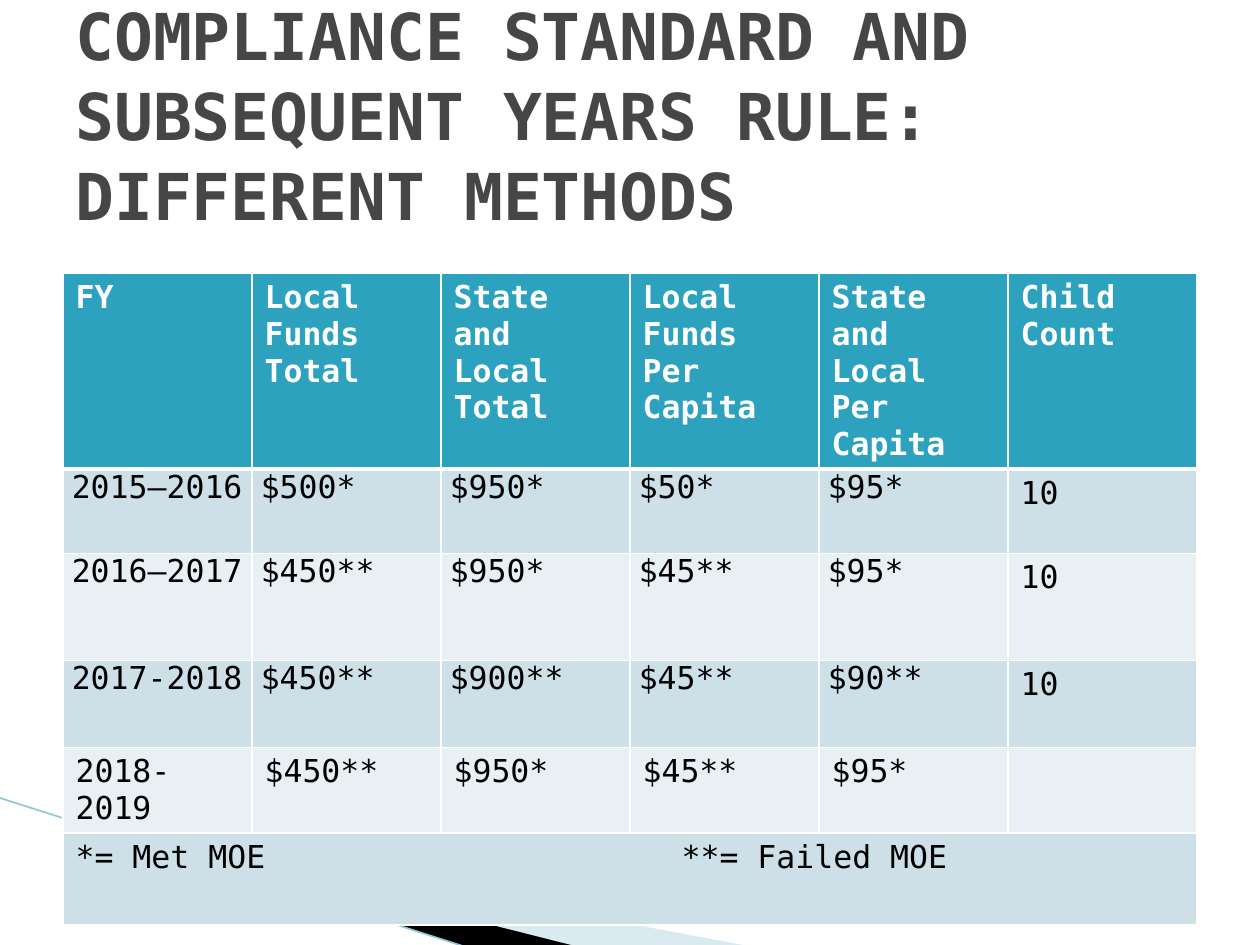
from lxml import etree
from pptx import Presentation, util as u
from pptx.dml.color import RGBColor
from pptx.enum import text
from pptx.oxml import ns

HUES = {"title": "464646", "head": "2DA2BF", "dark": "CDE0E8", "pale": "E8F0F4",
        "white": "FFFFFF", "black": "000000", "wedge": "A0CBDC", "line": "97C5D8"}
HEADS = ["FY", "Local Funds Total", "State and Local\nTotal",
         "Local Funds\nPer Capita", "State and Local Per Capita", "Child Count"]
YEARS = [["2015–2016 ", "$500*", "$950*", "$50*", "$95*", "10"],
         ["2016–2017", "$450**", "$950*", "$45**", "$95*", "10"],
         ["2017-2018", "$450**", "$900**", "$45**", "$90**", "10"],
         ["2018-2019", "$450**", "$950*", "$45**", "$95*", ""]]
KEY = ["*= Met MOE\t**= Failed MOE"] + [""] * 5
TALL = [0.94, 0.67, 0.85, 0.69, 0.66, 0.73]


def hue(name):
    return RGBColor.from_string(HUES[name])


def sub(node, tag, **attrs):
    return etree.SubElement(node, ns.qn(tag), **attrs)


class Page:
    """Holds the font and the slide being drawn."""

    def __init__(self, slide, face):
        self.slide, self.face = slide, face

    def style(self, frame, size, color, bold):
        for par in frame.paragraphs:
            font = par.font
            font.name, font.size, font.bold = self.face, u.Pt(size), bold
            font.color.rgb = hue(color)

    def shape(self, points, color, alpha=None):
        spots = [(u.Inches(x), u.Inches(y)) for x, y in points]
        pen = self.slide.shapes.build_freeform(*spots[0])
        pen.add_line_segments(spots[1:], close=True)
        form = pen.convert_to_shape()
        form.shadow.inherit = False
        form.fill.solid()
        form.fill.fore_color.rgb = hue(color)
        form.line.fill.background()
        if alpha:
            tint = form.fill._xPr.find(".//" + ns.qn("a:srgbClr"))
            sub(tint, "a:alpha", val=str(alpha * 1000))

    def line(self, ends, color, width):
        rule = self.slide.shapes.add_connector(1, *map(u.Inches, ends))
        rule.line.color.rgb = hue(color)
        rule.line.width = u.Pt(width)
        sub(rule._element.spPr, "a:effectLst")

    def title(self, words, box, size):
        frame = self.slide.shapes.add_textbox(*map(u.Inches, box)).text_frame
        frame.word_wrap = True
        frame.vertical_anchor = text.MSO_ANCHOR.MIDDLE
        frame.text = words
        frame.paragraphs[0].line_spacing = 1.03
        self.style(frame, size, "title", True)

    def edge(self, cell, base):
        """Draw white cell borders; base is the width of the bottom one."""
        props = cell._tc.get_or_add_tcPr()
        for side, width in zip("LRTB", (1, 1, 1, base)):
            rule = sub(props, "a:ln" + side, w=str(u.Pt(width)))
            sub(sub(rule, "a:solidFill"), "a:srgbClr", val=HUES["white"])

    def cell(self, cell, words, fill, head, tight):
        self.edge(cell, 3 if head else 1)
        cell.fill.solid()
        cell.fill.fore_color.rgb = hue(fill)
        cell.text = words
        if tight:
            cell.margin_left = cell.margin_right = u.Inches(0.07)
            cell.margin_top = cell.margin_bottom = 0
        self.style(cell.text_frame, 18, "white" if head else "black", head)

    def table(self, rows, tall, box):
        grid = self.slide.shapes.add_table(
            len(rows), len(rows[0]), *map(u.Inches, box)).table
        for r, row in enumerate(rows):
            grid.rows[r].height = u.Inches(tall[r])
            fill = "head" if r == 0 else "dark" if r % 2 else "pale"
            for c, words in enumerate(row):
                tight = 1 <= r <= 3 and c < 5
                self.cell(grid.cell(r, c), words, fill, r == 0, tight)
        last = len(rows) - 1
        foot = grid.cell(last, 0)
        foot.merge(grid.cell(last, len(rows[0]) - 1))
        props = foot.text_frame.paragraphs[0]._p.get_or_add_pPr()
        tabs = etree.Element(ns.qn("a:tabLst"))
        sub(tabs, "a:tab", pos=str(u.Inches(4.81)), algn="l")
        props.insert(0, tabs)


def main():
    deck = Presentation()
    deck.slide_width, deck.slide_height = u.Inches(10), u.Inches(7.5)
    page = Page(deck.slides.add_slide(deck.slide_layouts[6]), "DejaVu Sans Mono")
    page.shape([(0.55, 6.5), (5.95, 7.51), (4.56, 7.51)], "wedge", 40)
    page.shape([(0.53, 6.49), (4.57, 7.51), (3.72, 7.52)], "black")
    page.line((-0.01, 6.33, 3.71, 7.52), "line", 0.95)
    page.table([HEADS] + YEARS + [KEY], TALL, (0.5, 2.17, 9, sum(TALL)))
    page.title("COMPLIANCE STANDARD AND SUBSEQUENT YEARS RULE: DIFFERENT METHODS",
               (0.5, 0.3, 9, 1.2), 36.9)
    deck.save("out.pptx")


if __name__ == "__main__":
    main()
